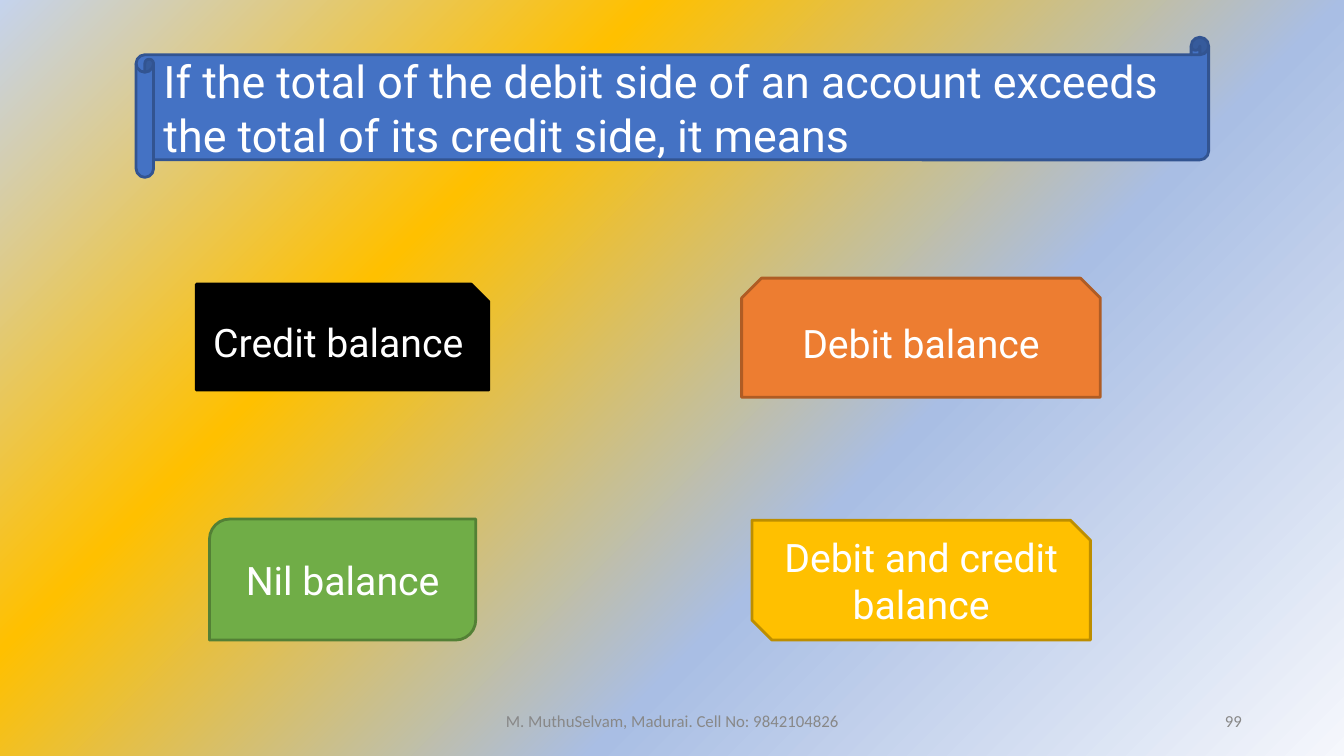
"""Build a quiz slide on account balances with four answer boxes."""
from dataclasses import dataclass

from pptx import Presentation
from pptx.dml.color import RGBColor
from pptx.enum.shapes import MSO_SHAPE
from pptx.enum.text import MSO_ANCHOR, PP_ALIGN
from pptx.oxml import parse_xml
from pptx.oxml.ns import nsdecls
from pptx.shapes.autoshape import Shape
from pptx.slide import Slide
from pptx.util import Cm, Pt


@dataclass(frozen=True)
class Theme:
    """Colours, fonts and type sizes."""
    white: str = "FFFFFF"
    grey: str = "888888"
    blue: tuple[str, str] = ("4472C4", "325491")
    black: tuple[str, str] = ("000000", "000000")
    orange: tuple[str, str] = ("ED7D31", "AF5C24")
    gold: tuple[str, str] = ("FFC000", "BD8E00")
    green: tuple[str, str] = ("70AD47", "538035")
    stops: tuple[tuple[int, str], ...] = (
        (0, "F5F7FC"), (36, "A9BEE4"), (69, "FFC000"), (100, "C5D3ED"))
    font: str = "Roboto"
    small: str = "Calibri"
    head: int = 32
    body: int = 28
    foot: int = 12
    edge: int = 2


THEME = Theme()


@dataclass(frozen=True)
class Panel:
    """A filled shape with its text; lengths in centimetres."""
    kind: MSO_SHAPE
    text: str
    area: tuple[float, float, float, float]
    paint: tuple[str, str]
    size: int = THEME.body
    align: PP_ALIGN = PP_ALIGN.CENTER


@dataclass(frozen=True)
class Note:
    """A line of footer text; lengths in centimetres."""
    text: str
    area: tuple[float, float, float, float]
    align: PP_ALIGN


PANELS = (
    Panel(MSO_SHAPE.HORIZONTAL_SCROLL,
          "If the total of the debit side of an account exceeds "
          "the total of its credit side, it means",
          (3.43, 0.94, 27.03, 3.53), THEME.blue, THEME.head, PP_ALIGN.LEFT),
    Panel(MSO_SHAPE.SNIP_1_RECTANGLE, "Credit balance",
          (4.95, 7.16, 7.37, 2.67), THEME.black),
    Panel(MSO_SHAPE.SNIP_2_SAME_RECTANGLE, "Debit balance",
          (18.69, 7.01, 9.04, 3), THEME.orange),
    Panel(MSO_SHAPE.SNIP_2_DIAG_RECTANGLE, "Debit and credit balance",
          (18.95, 13.11, 8.53, 3.02), THEME.gold),
    Panel(MSO_SHAPE.ROUND_2_DIAG_RECTANGLE, "Nil balance",
          (5.28, 13.08, 6.71, 3.05), THEME.green),
)
NOTES = (
    Note("M. MuthuSelvam, Madurai. Cell No: 9842104826",
         (11.23, 17.65, 11.43, 1.02), PP_ALIGN.CENTER),
    Note("99", (23.93, 17.65, 7.62, 1.02), PP_ALIGN.RIGHT),
)


def write(shape: Shape, text: str, align: PP_ALIGN,
          font: str, size: int, hue: str) -> None:
    """Set and format the text of a shape."""
    frame = shape.text_frame
    frame.text = text
    frame.word_wrap = True
    frame.vertical_anchor = MSO_ANCHOR.MIDDLE
    line = frame.paragraphs[0]
    line.alignment = align
    for run in line.runs:
        run.font.name = font
        run.font.size = Pt(size)
        run.font.color.rgb = RGBColor.from_string(hue)


def draw_panel(slide: Slide, panel: Panel) -> None:
    """Draw one filled panel."""
    shape = slide.shapes.add_shape(panel.kind, *map(Cm, panel.area))
    shape.shadow.inherit = False
    fill, edge = map(RGBColor.from_string, panel.paint)
    shape.fill.solid()
    shape.fill.fore_color.rgb = fill
    shape.line.color.rgb = edge
    shape.line.width = Pt(THEME.edge)
    write(shape, panel.text, panel.align, THEME.font, panel.size, THEME.white)


def draw_note(slide: Slide, note: Note) -> None:
    """Draw one footer note."""
    box = slide.shapes.add_textbox(*map(Cm, note.area))
    write(box, note.text, note.align, THEME.small, THEME.foot, THEME.grey)


def draw_back(slide: Slide) -> None:
    """Fill the background with a gradient spreading from the lower right."""
    stops = "".join(
        f'<a:gs pos="{pos * 1000}"><a:srgbClr val="{hue}"/></a:gs>'
        for pos, hue in THEME.stops)
    back = parse_xml(
        f'<p:bg {nsdecls("p", "a")}><p:bgPr><a:gradFill rotWithShape="1">'
        f'<a:gsLst>{stops}</a:gsLst><a:path path="circle">'
        '<a:fillToRect l="100000" t="100000"/></a:path>'
        '<a:tileRect r="-100000" b="-100000"/></a:gradFill>'
        '<a:effectLst/></p:bgPr></p:bg>')
    slide.element.cSld.insert(0, back)


def main() -> None:
    """Build and save the deck."""
    deck = Presentation()
    deck.slide_width, deck.slide_height = Cm(33.87), Cm(19.05)
    slide = deck.slides.add_slide(deck.slide_layouts[6])
    draw_back(slide)
    for panel in PANELS:
        draw_panel(slide, panel)
    for note in NOTES:
        draw_note(slide, note)
    deck.save("out.pptx")


if __name__ == "__main__":
    main()
